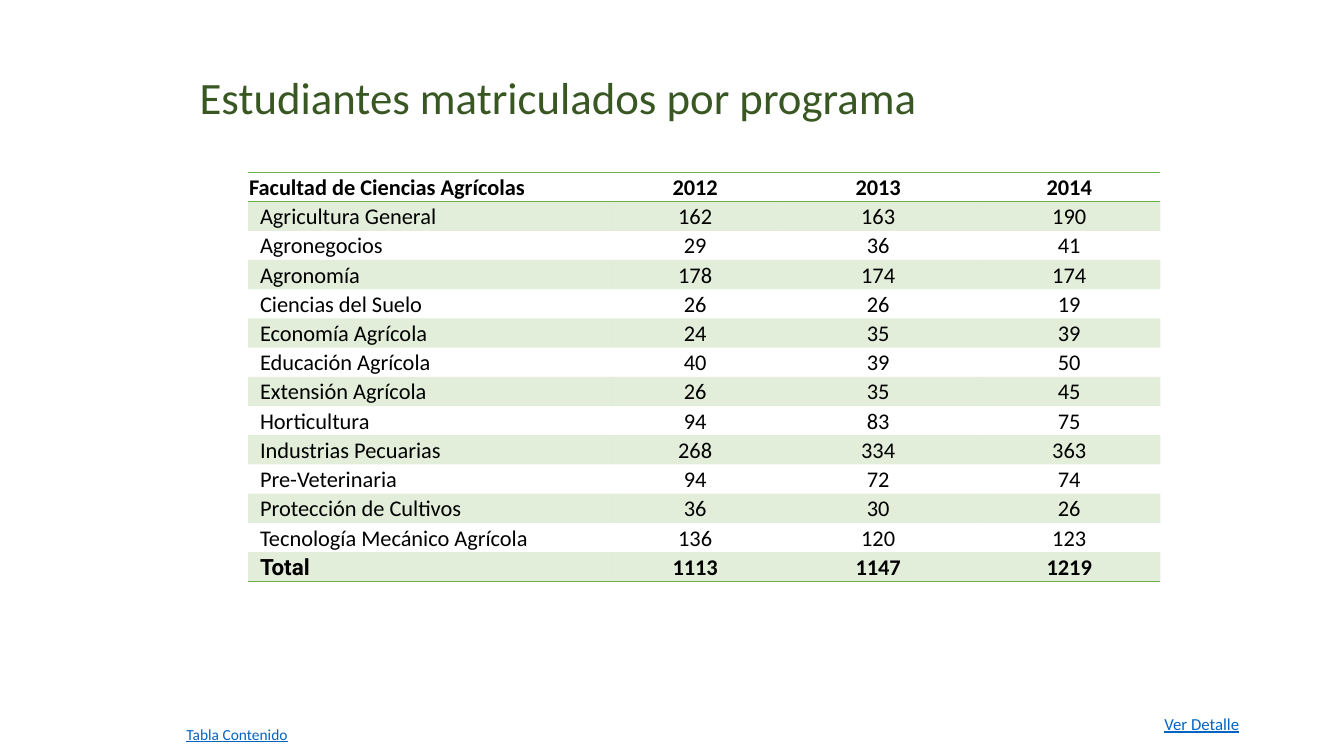
from lxml import etree
from pptx import Presentation
from pptx.dml.color import RGBColor as RGB
from pptx.enum.text import MSO_ANCHOR as Anchor, MSO_AUTO_SIZE as Fit, PP_ALIGN as Align
from pptx.oxml import parse_xml
from pptx.oxml.ns import nsdecls, qn
from pptx.util import Inches, Pt

BLACK = RGB(0x00, 0x00, 0x00)
GREEN = RGB(0x70, 0xAD, 0x47)
DARK = RGB(0x38, 0x57, 0x23)
BLUE = RGB(0x05, 0x63, 0xC1)
NO_GRID = "{2D5ABB26-0587-4C30-8999-92F81FD0307C}"

WIDTHS = (3.61, 1.65, 1.98, 1.81)
ROW = 0.29
ROWS = (
    ("Facultad de Ciencias Agrícolas", 2012, 2013, 2014),
    ("Agricultura General", 162, 163, 190),
    ("Agronegocios", 29, 36, 41),
    ("Agronomía", 178, 174, 174),
    ("Ciencias del Suelo", 26, 26, 19),
    ("Economía Agrícola", 24, 35, 39),
    ("Educación Agrícola", 40, 39, 50),
    ("Extensión Agrícola", 26, 35, 45),
    ("Horticultura", 94, 83, 75),
    ("Industrias Pecuarias", 268, 334, 363),
    ("Pre-Veterinaria", 94, 72, 74),
    ("Protección de Cultivos", 36, 30, 26),
    ("Tecnología Mecánico Agrícola", 136, 120, 123),
    ("Total", 1113, 1147, 1219),
)


def put(item, values):
    """Set each attribute of item named in values."""
    for name, value in values.items():
        setattr(item, name, value)


class Page:
    face = "Calibri"

    def __init__(self, deck):
        self.slide = deck.slides.add_slide(deck.slide_layouts[5])

    def text(self, frame, words, size, color, align=Align.LEFT, **more):
        para = frame.paragraphs[0]
        para.alignment = align
        run = para.add_run()
        run.text = words
        put(run.font, {"name": self.face, "size": Pt(size), **more})
        run.font.color.rgb = color

    def label(self, shape, words, size, color, **more):
        """Fill a one-line box that does not wrap."""
        frame = shape.text_frame
        put(frame, {
            "word_wrap": False, "auto_size": Fit.SHAPE_TO_FIT_TEXT,
            "vertical_anchor": Anchor.TOP,
            "margin_left": Inches(0.1), "margin_right": Inches(0.1),
            "margin_top": Inches(0.05), "margin_bottom": Inches(0.05),
        })
        self.text(frame, words, size, color, **more)

    def title(self, words, *box):
        shape = self.slide.shapes.title
        put(shape, dict(zip(("left", "top", "width", "height"), map(Inches, box))))
        self.label(shape, words, 32, DARK)
        shape.text_frame.paragraphs[0].line_spacing = 1.0

    def link(self, words, size, *box):
        shape = self.slide.shapes.add_textbox(*map(Inches, box))
        self.label(shape, words, size, BLUE, underline=True)

    def rule(self, cell, side):
        """Draw a green border on one side: T or B."""
        cell._tc.get_or_add_tcPr().append(parse_xml(
            f'<a:ln{side} {nsdecls("a")} w="{Pt(1)}"><a:solidFill>'
            f'<a:srgbClr val="{GREEN}"/></a:solidFill></a:ln{side}>'))

    def tint(self, cell):
        """Fill with green at 20 % opacity."""
        cell.fill.solid()
        cell.fill.fore_color.rgb = GREEN
        color = cell._tc.tcPr.find(qn("a:solidFill")).find(qn("a:srgbClr"))
        etree.SubElement(color, qn("a:alpha")).set("val", "20000")

    def table(self, left, top):
        last = len(ROWS) - 1
        frame = self.slide.shapes.add_table(
            len(ROWS), len(WIDTHS), Inches(left), Inches(top),
            Inches(sum(WIDTHS)), Inches(ROW * len(ROWS)))
        grid = frame.table
        put(grid, {"first_row": False, "horz_banding": False})
        grid._tbl.tblPr.find(qn("a:tableStyleId")).text = NO_GRID
        for col, width in zip(grid.columns, WIDTHS):
            col.width = Inches(width)
        for r, row in enumerate(ROWS):
            grid.rows[r].height = Inches(ROW)
            for c, value in enumerate(row):
                cell = grid.cell(r, c)
                put(cell, {
                    "margin_left": Inches(0.12 if r and not c else 0.01),
                    "margin_right": Inches(0.01), "margin_top": Inches(0.01),
                    "margin_bottom": 0, "vertical_anchor": Anchor.BOTTOM,
                })
                for side in {0: "TB", last: "B"}.get(r, ""):
                    self.rule(cell, side)
                if r % 2:
                    self.tint(cell)
                else:
                    cell.fill.background()
                self.text(cell.text_frame, str(value), 16, BLACK,
                          Align.CENTER if c else Align.LEFT,
                          bold=r in (0, last),
                          name="Roboto" if value == "Total" else self.face)


def main():
    deck = Presentation()
    put(deck, {"slide_width": Inches(13.33), "slide_height": Inches(7.5)})
    page = Page(deck)
    page.table(2.46, 1.71)
    page.title("Estudiantes matriculados por programa", 1.88, 0.64, 7.39, 0.64)
    page.link("Tabla Contenido", 11, 1.75, 7.14, 1.22, 0.29)
    page.link("Ver Detalle", 12, 11.45, 7.03, 0.95, 0.3)
    deck.save("out.pptx")


if __name__ == "__main__":
    main()
